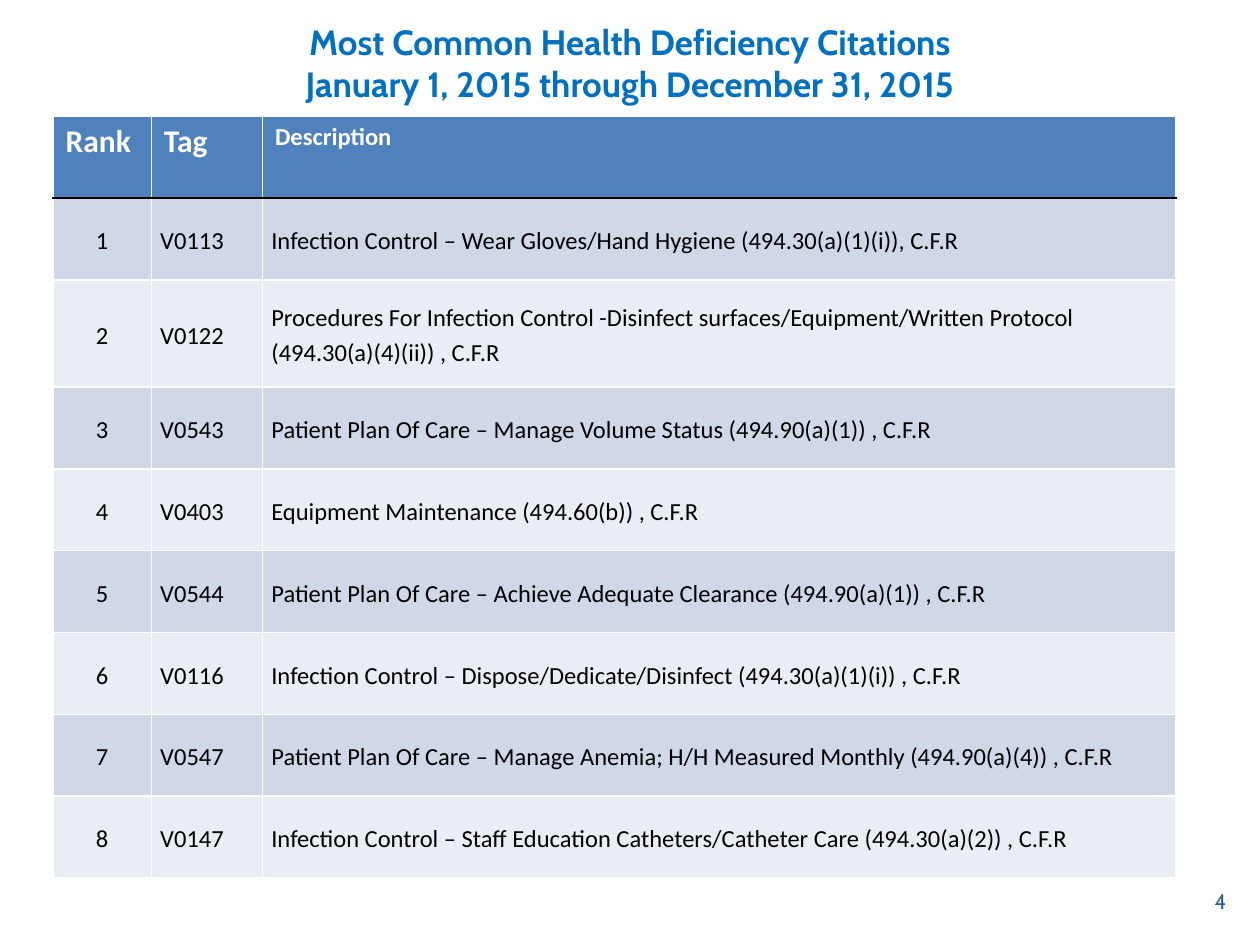
from lxml.etree import SubElement
from pptx import Presentation
from pptx.dml.color import RGBColor
from pptx.enum.text import MSO_ANCHOR, PP_ALIGN
from pptx.oxml.ns import qn
from pptx.util import Cm, Pt

WHITE = RGBColor(0xFF, 0xFF, 0xFF)
BLACK = RGBColor(0x00, 0x00, 0x00)
BLUE = RGBColor(0x00, 0x70, 0xC0)
NAVY = RGBColor(0x37, 0x60, 0x92)
HEAD = RGBColor(0x4F, 0x81, 0xBD)
DARK = RGBColor(0xD0, 0xD8, 0xE8)
PALE = RGBColor(0xE9, 0xED, 0xF4)

ROWS = [
    ("Rank", "Tag", "Description"),
    ("1", "V0113", "Infection Control – Wear Gloves/Hand Hygiene (494.30(a)(1)(i)), C.F.R"),
    ("2", "V0122", "Procedures For Infection Control -Disinfect surfaces/Equipment/Written Protocol (494.30(a)(4)(ii)) , C.F.R"),
    ("3", "V0543", "Patient Plan Of Care – Manage Volume Status (494.90(a)(1)) , C.F.R"),
    ("4", "V0403", "Equipment Maintenance (494.60(b)) , C.F.R"),
    ("5", "V0544", "Patient Plan Of Care – Achieve Adequate Clearance (494.90(a)(1)) , C.F.R"),
    ("6", "V0116", "Infection Control – Dispose/Dedicate/Disinfect (494.30(a)(1)(i)) , C.F.R"),
    ("7", "V0547", "Patient Plan Of Care – Manage Anemia; H/H Measured Monthly (494.90(a)(4)) , C.F.R"),
    ("8", "V0147", "Infection Control – Staff Education Catheters/Catheter Care (494.30(a)(2)) , C.F.R"),
]
WIDTHS = [1.98, 2.24, 18.42]
HIGH = 1.65
TALL = 2.16


def style(para, name, size, color, bold=False):
    for run in para.runs:
        font = run.font
        font.name = name
        font.size = Pt(size)
        font.bold = bold
        font.color.rgb = color


def border(cell, side, color):
    line = SubElement(cell._tc.get_or_add_tcPr(), qn("a:ln" + side), w=str(Pt(1)))
    fill = SubElement(line, qn("a:solidFill"))
    SubElement(fill, qn("a:srgbClr"), val=str(color))


deck = Presentation()
deck.slide_width = Cm(25.4)
deck.slide_height = Cm(19.05)
slide = deck.slides.add_slide(deck.slide_layouts[6])

texts = [
    ("4", (19.05, 17.65, 5.92, 1.02), PP_ALIGN.RIGHT, 12, NAVY, False),
    ("Most Common Health Deficiency Citations\vJanuary 1, 2015 through December 31, 2015",
     (1.27, 0, 22.86, 2.54), PP_ALIGN.CENTER, 20, BLUE, True),
]
for text, place, align, size, color, bold in texts:
    frame = slide.shapes.add_textbox(*map(Cm, place)).text_frame
    frame.word_wrap = True
    frame.vertical_anchor = MSO_ANCHOR.MIDDLE
    frame.text = text
    para = frame.paragraphs[0]
    para.alignment = align
    style(para, "Cabin", size, color, bold)

total = HIGH * (len(ROWS) - 1) + TALL
table = slide.shapes.add_table(
    len(ROWS), len(WIDTHS), Cm(1.07), Cm(2.34), Cm(sum(WIDTHS)), Cm(total)
).table
for col, width in zip(table.columns, WIDTHS):
    col.width = Cm(width)

for r, row in enumerate(ROWS):
    table.rows[r].height = Cm(TALL if r == 2 else HIGH)
    for c, text in enumerate(row):
        cell = table.cell(r, c)
        for side in "LRTB":
            rule = (r, side) in [(0, "B"), (1, "T")]
            border(cell, side, BLACK if rule else WHITE)
        cell.fill.solid()
        cell.text_frame.text = text
        para = cell.text_frame.paragraphs[0]
        if r == 0:
            cell.fill.fore_color.rgb = HEAD
            style(para, "Calibri", 14 if c == 2 else 18, WHITE, True)
            continue
        cell.fill.fore_color.rgb = DARK if r % 2 else PALE
        cell.vertical_anchor = MSO_ANCHOR.MIDDLE
        cell.margin_left = cell.margin_right = Cm(0.18)
        cell.margin_top = cell.margin_bottom = 0
        para.line_spacing = 1.15
        if c == 0:
            para.alignment = PP_ALIGN.CENTER
        else:
            para.space_after = Pt(10)
        style(para, "Calibri", 14, BLACK)

deck.save("out.pptx")
